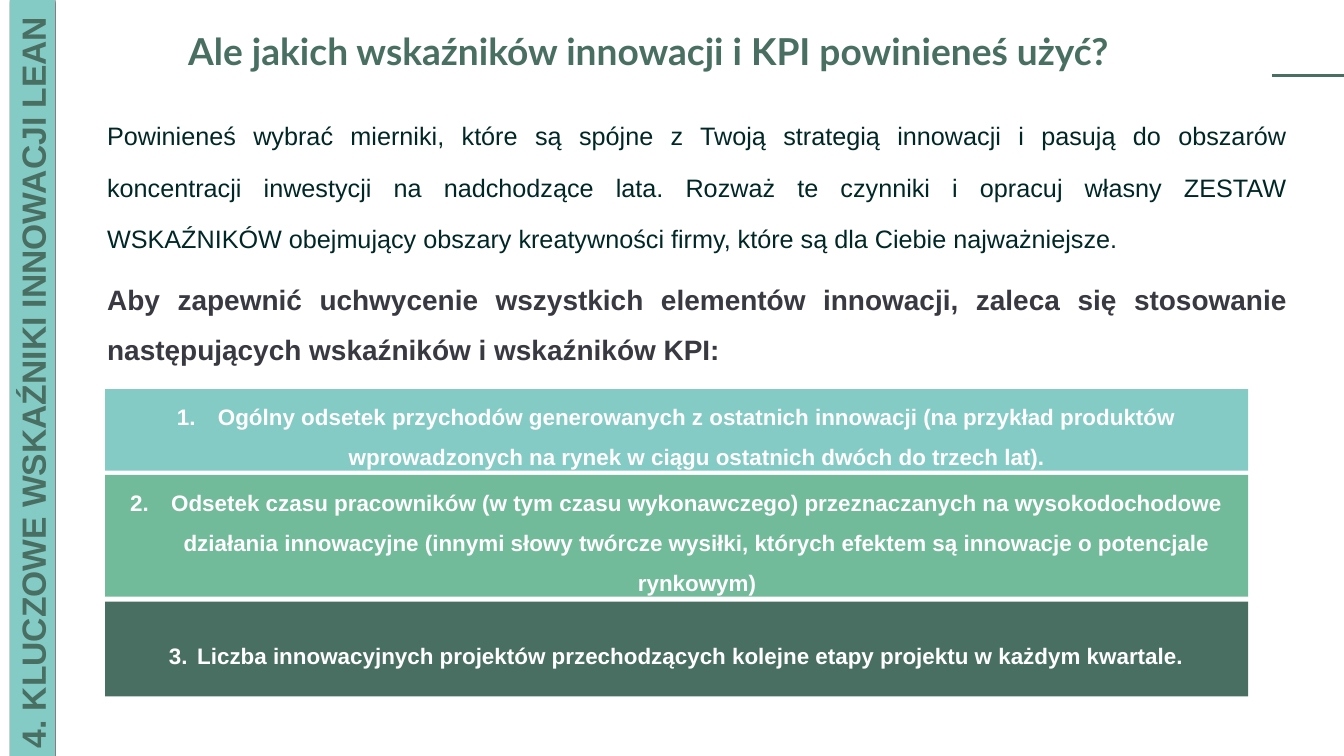
import pptx
import pptx.util
import pptx.dml.color
import pptx.enum.shapes
import pptx.enum.text
import pptx.oxml
import pptx.oxml.ns

Pt = pptx.util.Pt
RGBColor = pptx.dml.color.RGBColor
ALIGN = pptx.enum.text.PP_ALIGN
ANCHOR = pptx.enum.text.MSO_ANCHOR
AUTO_SIZE = pptx.enum.text.MSO_AUTO_SIZE

DARK_GREEN = RGBColor(0x49, 0x6F, 0x63)
GREEN = RGBColor(0x71, 0xBB, 0x9A)
TEAL = RGBColor(0x84, 0xCA, 0xC5)
INK = RGBColor(0x00, 0x27, 0x26)
CHARCOAL = RGBColor(0x39, 0x39, 0x41)
WHITE = RGBColor(0xFF, 0xFF, 0xFF)
NS = pptx.oxml.ns.nsdecls("a")
LEFT = 150


def write(holder, text, color, size, align, spacing, margins, anchor, font="Arial", bold=True):
    frame = holder.text_frame
    sides = ("margin_left", "margin_top", "margin_right", "margin_bottom")
    layout = {"word_wrap": True, "vertical_anchor": anchor}
    layout.update({side: Pt(margin) for side, margin in zip(sides, margins)})
    for name, value in layout.items():
        setattr(frame, name, value)
    paragraph = frame.paragraphs[0]
    paragraph.alignment = align
    paragraph.line_spacing = spacing
    run = paragraph.add_run()
    run.text = text
    for name, value in {"name": font, "size": Pt(size), "bold": bold}.items():
        setattr(run.font, name, value)
    run.font.color.rgb = color
    return paragraph


def add_bar(left, top, width, height, color):
    bar = slide.shapes.add_shape(
        pptx.enum.shapes.MSO_SHAPE.RECTANGLE, Pt(left), Pt(top), Pt(width), Pt(height))
    bar.shadow.inherit = False
    bar.fill.solid()
    bar.fill.fore_color.rgb = color
    bar.line.fill.background()
    return bar


deck = pptx.Presentation()
deck.slide_width, deck.slide_height = Pt(1920), Pt(1080)
slide = deck.slides.add_slide(deck.slide_layouts[6])

rule = slide.shapes.add_connector(
    pptx.enum.shapes.MSO_CONNECTOR.STRAIGHT, Pt(1817), Pt(108), Pt(1920), Pt(108))
rule.line.color.rgb = DARK_GREEN
rule.line.width = Pt(4)
rule._element.spPr.append(pptx.oxml.parse_xml(f"<a:effectLst {NS}/>"))

tight = (3, 3, 3, 3)
roomy = (7.2, 3.6, 7.2, 3.6)

title = slide.shapes.add_textbox(Pt(83.5), Pt(50.5), Pt(1699), Pt(88.5))
write(title, "Ale jakich wskaźników innowacji i KPI powinieneś użyć? ",
      DARK_GREEN, 53, ALIGN.CENTER, 0.8, tight, ANCHOR.TOP, font="Lato")

advice = slide.shapes.add_textbox(Pt(LEFT), Pt(139), Pt(1691), Pt(335))
write(advice,
      "Powinieneś wybrać mierniki, które są spójne z Twoją strategią innowacji i pasują do "
      "obszarów koncentracji inwestycji na nadchodzące lata. Rozważ te czynniki i opracuj "
      "własny ZESTAW WSKAŹNIKÓW obejmujący obszary kreatywności firmy, które są dla Ciebie "
      "najważniejsze.",
      INK, 36, ALIGN.JUSTIFY, 1.7, tight, ANCHOR.TOP, bold=False)

lead_in = slide.shapes.add_textbox(Pt(LEFT), Pt(376), Pt(1691), Pt(168))
write(lead_in,
      "Aby zapewnić uchwycenie wszystkich elementów innowacji, zaleca się stosowanie "
      "następujących wskaźników i wskaźników KPI:",
      CHARCOAL, 40, ALIGN.JUSTIFY, 1.5, tight, ANCHOR.TOP)

section = add_bar(14.5, 0, 64, 1080, TEAL)
write(section, "4. KLUCZOWE WSKAŹNIKI INNOWACJI LEAN ",
      DARK_GREEN, 48, ALIGN.CENTER, 1.0, tight, ANCHOR.MIDDLE)
section.text_frame.auto_size = AUTO_SIZE.SHAPE_TO_FIT_TEXT
section.text_frame._txBody.bodyPr.set("vert", "vert270")
section_effects = section._element.spPr.find(pptx.oxml.ns.qn("a:effectLst"))
section_effects.append(pptx.oxml.parse_xml(
    f'<a:outerShdw {NS} blurRad="12700" dist="12700" dir="5400000" rotWithShape="0">'
    '<a:srgbClr val="000000"><a:alpha val="50000"/></a:srgbClr></a:outerShdw>'))

indicators = [
    ("Ogólny odsetek przychodów generowanych z ostatnich innowacji (na przykład produktów "
     "wprowadzonych na rynek w ciągu ostatnich dwóch do trzech lat).",
     556, 116.5, TEAL, 58.5, roomy, AUTO_SIZE.SHAPE_TO_FIT_TEXT),
    ("Odsetek czasu pracowników (w tym czasu wykonawczego) przeznaczanych na "
     "wysokodochodowe działania innowacyjne (innymi słowy twórcze wysiłki, których efektem "
     "są innowacje o potencjale rynkowym)",
     678.5, 174, GREEN, 58.5, roomy, AUTO_SIZE.SHAPE_TO_FIT_TEXT),
    ("Liczba innowacyjnych projektów przechodzących kolejne etapy projektu w każdym kwartale.",
     859.5, 135.5, DARK_GREEN, 40.5, tight, AUTO_SIZE.NONE),
]
for number, (text, top, height, color, indent, margins, fit) in enumerate(indicators, 1):
    indicator = add_bar(LEFT, top, 1633, height, color)
    paragraph = write(indicator, text, WHITE, 32, ALIGN.CENTER, 1.5, margins, ANCHOR.MIDDLE)
    indicator.text_frame.auto_size = fit
    properties = paragraph._p.get_or_add_pPr()
    for name, value in {"marL": Pt(indent), "indent": -Pt(indent)}.items():
        properties.set(name, str(value))
    properties.append(pptx.oxml.parse_xml(
        f'<a:buAutoNum {NS} type="arabicPeriod" startAt="{number}"/>'))

deck.save("out.pptx")
